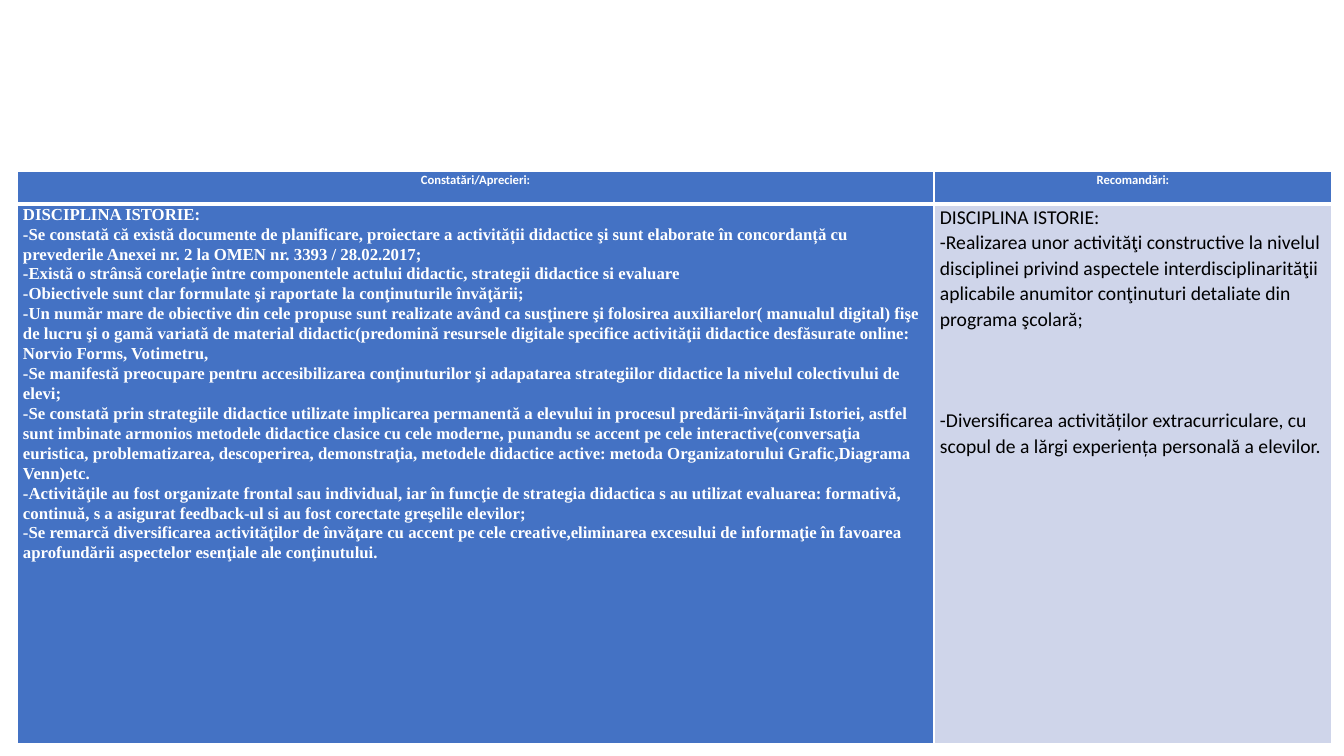
"""Builds the slide with findings and recommendations for the history subject."""
from lxml import etree
from pptx import Presentation
from pptx.dml.color import RGBColor as RGB
from pptx.enum.text import PP_ALIGN as AL
from pptx.oxml.ns import qn
from pptx.util import Pt

HEADERS = ["Constatări/Aprecieri:", "Recomandări:"]
FINDINGS = [
    "DISCIPLINA ISTORIE:",
    "-Se constată că există documente de planificare, proiectare a activității didactice şi sunt elaborate în concordanță cu prevederile Anexei nr. 2 la OMEN nr. 3393 / 28.02.2017;",
    "-Există o strânsă corelaţie între componentele actului didactic, strategii didactice si evaluare",
    "-Obiectivele sunt clar formulate şi raportate la conţinuturile învăţării;",
    "-Un număr mare de obiective din cele propuse sunt realizate având ca susţinere şi folosirea auxiliarelor( manualul digital) fişe de lucru şi o gamă variată de material didactic(predomină resursele digitale specifice activităţii didactice desfăsurate online: Norvio Forms, Votimetru,",
    "-Se manifestă preocupare pentru accesibilizarea conţinuturilor şi adapatarea strategiilor didactice la nivelul colectivului de elevi;",
    "-Se constată prin strategiile didactice utilizate implicarea permanentă a elevului in procesul predării-învăţarii Istoriei, astfel sunt imbinate armonios metodele didactice clasice cu cele moderne, punandu se accent pe cele interactive(conversaţia euristica, problematizarea, descoperirea, demonstraţia, metodele didactice active: metoda Organizatorului Grafic,Diagrama Venn)etc.",
    "-Activităţile au fost organizate frontal sau individual, iar în funcţie de strategia didactica s au utilizat evaluarea: formativă, continuă, s a asigurat feedback-ul si au fost corectate greşelile elevilor;",
    "-Se remarcă diversificarea activităţilor de învăţare cu accent pe cele creative,eliminarea excesului de informaţie în favoarea aprofundării aspectelor esenţiale ale conţinutului.",
]
RECOMMENDATIONS = [
    "DISCIPLINA ISTORIE:",
    "-Realizarea unor activităţi constructive la nivelul disciplinei privind aspectele interdisciplinarităţii aplicabile anumitor conţinuturi detaliate din programa şcolară;",
    "-Diversificarea activităților extracurriculare, cu scopul de a lărgi experiența personală a elevilor.",
]
BLUE, PALE, WHITE, BLACK = "4472C4", "CFD5EA", "FFFFFF", "000000"
LEFT, TOP = 17, 171
COLS, ROWS = [917, 398], [33, 540]
HEAD_BORDERS = {"L": 1, "R": 1, "T": 1, "B": 3}
BODY_BORDERS = {"L": 1, "R": 1, "T": 3, "B": 1}


def px(n):
    return round(n * 914400 / 100.8)


def rgb(color):
    return RGB.from_string(color)


def add_borders(cell, borders):
    tc_pr = cell._tc.get_or_add_tcPr()
    for side, width in borders.items():
        ln = etree.SubElement(tc_pr, qn(f"a:ln{side}"), w=str(Pt(width)))
        fill = etree.SubElement(ln, qn("a:solidFill"))
        etree.SubElement(fill, qn("a:srgbClr"), val=WHITE)


def write(cell, lines, size, font="Calibri", color=WHITE, bold=True, align=AL.LEFT, gaps={}):
    tf = cell.text_frame
    for i, line in enumerate(lines):
        p = tf.add_paragraph() if i else tf.paragraphs[0]
        p.alignment, p.line_spacing = align, 1.07
        if i in gaps:
            p.space_before = Pt(gaps[i])
        r = p.add_run()
        r.text = line
        r.font.name, r.font.size, r.font.bold = font, Pt(size), bold
        r.font.color.rgb = rgb(color)


def main():
    prs = Presentation()
    prs.slide_width, prs.slide_height = px(1344), px(756)
    s = prs.slides.add_slide(prs.slide_layouts[6])
    table = s.shapes.add_table(2, 2, px(LEFT), px(TOP), px(sum(COLS)), px(sum(ROWS))).table
    table.first_row = table.horz_banding = False
    for column, width in zip(table.columns, COLS):
        column.width = px(width)
    for row, height in zip(table.rows, ROWS):
        row.height = px(height)

    fills = [[BLUE, BLUE], [BLUE, PALE]]
    for i, borders in enumerate([HEAD_BORDERS, BODY_BORDERS]):
        for j, color in enumerate(fills[i]):
            cell = table.cell(i, j)
            cell.margin_left = cell.margin_right = px(6)
            cell.margin_top = cell.margin_bottom = 0
            add_borders(cell, borders)
            cell.fill.solid()
            cell.fill.fore_color.rgb = rgb(color)

    for j, header in enumerate(HEADERS):
        write(table.cell(0, j), [header], 9, align=AL.CENTER)
    write(table.cell(1, 0), FINDINGS, 12, font="Times New Roman")
    write(table.cell(1, 1), RECOMMENDATIONS, 14, color=BLACK, bold=False, gaps={2: 54})
    prs.save("out.pptx")


if __name__ == "__main__":
    main()
